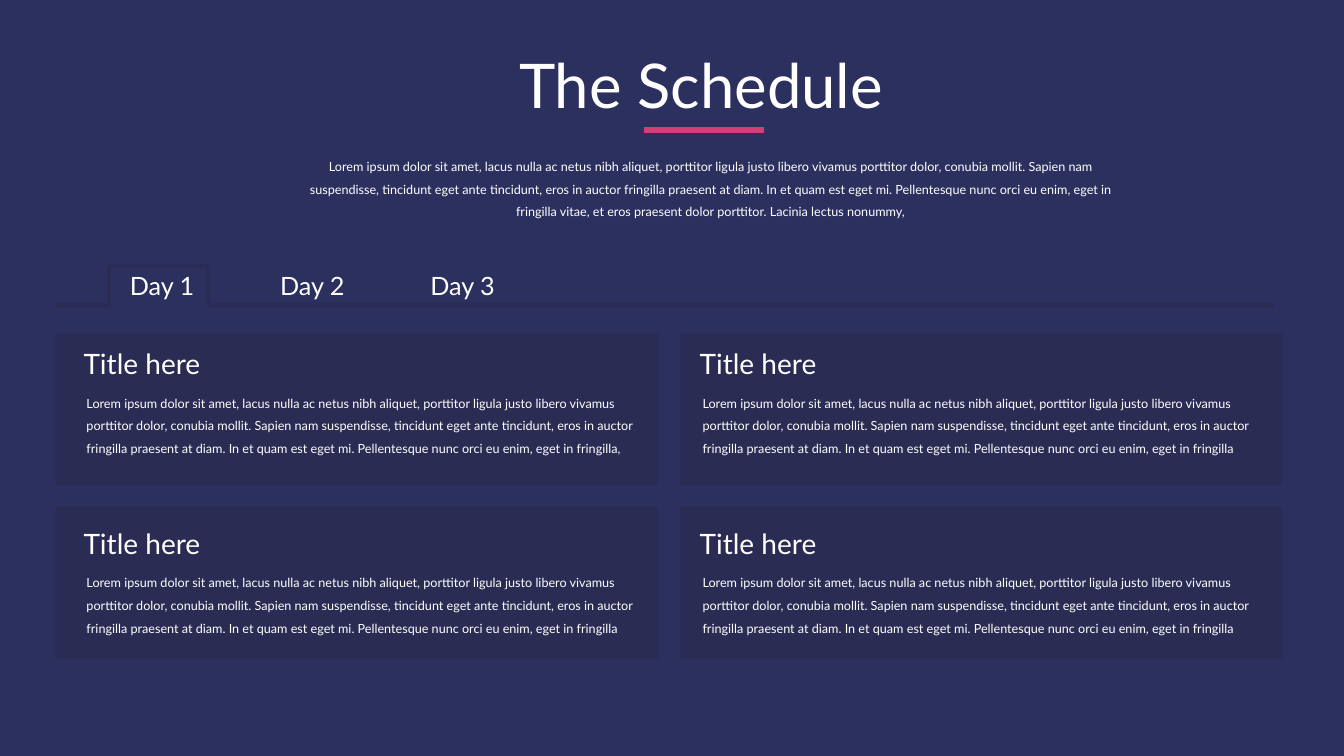
from itertools import pairwise, product

from lxml.etree import SubElement
from pptx import Presentation
from pptx.dml.color import RGBColor
from pptx.enum.shapes import MSO_CONNECTOR as Link, MSO_SHAPE as Shape
from pptx.enum.text import MSO_ANCHOR as Anchor, PP_ALIGN as Align
from pptx.oxml.ns import qn
from pptx.util import Inches, Pt

NAVY = RGBColor(0x2C, 0x30, 0x5F)
DARK = RGBColor(0x2A, 0x2C, 0x53)
PINK = RGBColor(0xD5, 0x3E, 0x76)
WHITE = RGBColor(0xFF, 0xFF, 0xFF)
FONT = "Lato"

LEFT, TOP = 0.55, 3.31
CARD_W, CARD_H = 5.98, 1.5
CARD_DX, CARD_DY = 6.19, 1.72
COPY_DX, COPY_DY = 6.11, 1.78
TAB_DX = 1.49
TAB_L, TAB_R, TAB_TOP, RULE_Y, RULE_R = 1.08, 2.06, 2.64, 3.03, 12.64

OPENING = "Lorem ipsum dolor sit amet, lacus nulla ac netus nibh aliquet, porttitor ligula justo libero vivamus "
LOREM = (
    OPENING + "porttitor dolor, conubia mollit. Sapien nam suspendisse, tincidunt eget ante tincidunt, "
    "eros in auctor fringilla praesent at diam. In et quam est eget mi. "
    "Pellentesque nunc orci eu enim, eget in fringilla"
)
INTRO = LOREM + " vitae, et eros praesent dolor porttitor. Lacinia lectus nonummy,"


def write(slide, text, x, y, w, h, size=9, align=Align.LEFT, before=None, spacing=None):
    box = slide.shapes.add_textbox(Inches(x), Inches(y), Inches(w), Inches(h))
    frame = box.text_frame
    frame.word_wrap = True
    frame.vertical_anchor = Anchor.TOP
    para = frame.paragraphs[0]
    para.alignment = align
    if before is not None:
        para.space_before = Pt(before)
    if spacing is not None:
        para.line_spacing = spacing
    run = para.add_run()
    run.text = text
    run.font.name = FONT
    run.font.size = Pt(size)
    run.font.color.rgb = WHITE


def head(slide, text, x, y, w, h, size):
    write(slide, text, x, y, w, h, size=size, before=10)


def body(slide, text, x, y, w, align=Align.LEFT):
    write(slide, text, x, y, w, 0.78, align=align, spacing=1.5)


def rule(slide, start, end, color, width):
    line = slide.shapes.add_connector(Link.STRAIGHT, *map(Inches, start + end))
    line.line.color.rgb = color
    line.line.width = Pt(width)
    SubElement(line._element.spPr, qn("a:effectLst"))


def tabs(slide):
    """Draw the day names and the rule that rises around the first one."""
    for i in range(3):
        head(slide, f"Day {i + 1}", 1.19 + i * TAB_DX, 2.63, 0.87, 0.39, 18)
    outline = [
        (LEFT, RULE_Y), (TAB_L, RULE_Y), (TAB_L, TAB_TOP),
        (TAB_R, TAB_TOP), (TAB_R, RULE_Y), (RULE_R, RULE_Y),
    ]
    for start, end in pairwise(outline):
        rule(slide, start, end, DARK, 3)


def card(slide, col, row, text):
    x, y = LEFT + col * CARD_DX, TOP + row * CARD_DY
    panel = slide.shapes.add_shape(
        Shape.RECTANGLE, Inches(x), Inches(y), Inches(CARD_W), Inches(CARD_H))
    panel.shadow.inherit = False
    panel.fill.solid()
    panel.fill.fore_color.rgb = DARK
    panel.line.fill.background()
    x, y = 0.73 + col * COPY_DX, 3.39 + row * COPY_DY
    head(slide, "Title here", x, y, 1.68, 0.39, 20)
    body(slide, text, x + 0.03, y + 0.41, 5.76)


def main():
    deck = Presentation()
    deck.slide_width, deck.slide_height = Inches(13.33), Inches(7.5)
    slide = deck.slides.add_slide(deck.slide_layouts[6])
    slide.background.fill.solid()
    slide.background.fill.fore_color.rgb = NAVY

    head(slide, "The Schedule", 5.05, 0.42, 3.87, 0.87, 44)
    rule(slide, (6.39, 1.29), (7.58, 1.29), PINK, 4.5)
    body(slide, INTRO, 2.85, 1.45, 8.39, Align.CENTER)
    tabs(slide)
    for col, row in product(range(2), repeat=2):
        card(slide, col, row, LOREM + ("," if col == row == 0 else ""))
    deck.save("out.pptx")


if __name__ == "__main__":
    main()
